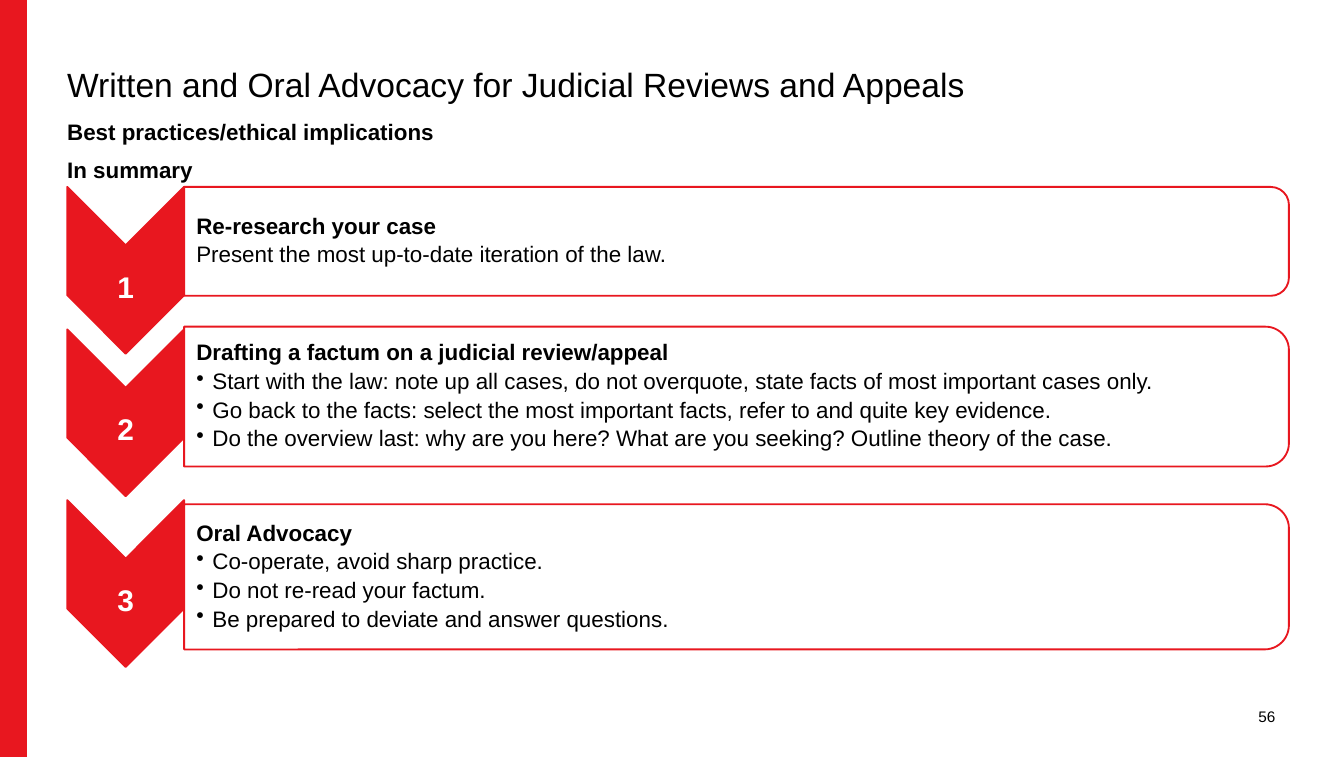
from pptx import Presentation
from pptx.dml.color import RGBColor
from pptx.enum.shapes import MSO_SHAPE
from pptx.enum.text import MSO_ANCHOR, MSO_AUTO_SIZE, PP_ALIGN
from pptx.oxml.ns import qn
from pptx.util import Pt
from lxml import etree

PX = 9144  # 100 px to the inch
WIDE, HIGH = 1000, 563
FONT = "Arial"
INK = {"red": "E8171F", "white": "FFFFFF", "black": "000000"}
RECT, CHEVRON = MSO_SHAPE.RECTANGLE, MSO_SHAPE.CHEVRON
PANEL = MSO_SHAPE.ROUND_2_SAME_RECTANGLE
TOP, MIDDLE = MSO_ANCHOR.TOP, MSO_ANCHOR.MIDDLE
LEFT, CENTER, RIGHT = PP_ALIGN.LEFT, PP_ALIGN.CENTER, PP_ALIGN.RIGHT
NO_FIT = MSO_AUTO_SIZE.NONE

LEFT_EDGE = 50
TAG_WIDE, TAG_HIGH = 87, 124
PANEL_WIDE = 822
HANG = 12

# chevron top, panel top, panel height, heading, lines, bulleted
STEPS = [
    (139, 139, 81, "Re-research your case",
     ["Present the most up-to-date iteration of the law."], False),
    (245, 243, 104, "Drafting a factum on a judicial review/appeal",
     ["Start with the law: note up all cases, do not overquote, "
      "state facts of most important cases only.",
      "Go back to the facts: select the most important facts, "
      "refer to and quite key evidence.",
      "Do the overview last: why are you here? What are you seeking? "
      "Outline theory of the case."], True),
    (372, 375, 108, "Oral Advocacy",
     ["Co-operate, avoid sharp practice.",
      "Do not re-read your factum.",
      "Be prepared to deviate and answer questions."], True),
]


def color(name):
    return RGBColor.from_string(INK[name])


def emu(*nums):
    return [round(num * PX) for num in nums]


def add_bullet(para):
    props = para._p.get_or_add_pPr()
    props.set("marL", str(HANG * PX))
    props.set("indent", str(-HANG * PX))
    etree.SubElement(props, qn("a:buChar")).set("char", "•")


def add_text(slide, box, lines, size=12, bold=False, ink="black", align=LEFT,
             anchor=TOP, inset=0, space=1.0, after=0, head=False,
             bullets=False, shape=None):
    """Fill a text box, or the given shape; head makes only line one bold."""
    if shape is None:
        shape = slide.shapes.add_textbox(*emu(*box))
    else:
        shape.left, shape.top, shape.width, shape.height = emu(*box)
    frame = shape.text_frame
    frame.word_wrap = True
    frame.auto_size = NO_FIT
    frame.vertical_anchor = anchor
    frame.margin_left = inset * PX
    frame.margin_right = frame.margin_top = frame.margin_bottom = 0
    for i, line in enumerate(lines):
        para = frame.add_paragraph() if i else frame.paragraphs[0]
        if bullets and i:
            add_bullet(para)
        para.alignment = align
        para.line_spacing = space
        para.space_after = Pt(after)
        run = para.add_run()
        run.text = line
        font = run.font
        font.name, font.size = FONT, Pt(size)
        font.bold = bold or (head and i == 0)
        font.color.rgb = color(ink)


def add_form(slide, kind, box, fill, line=None, turned=False):
    """Draw a shape that covers box, turned a quarter clockwise if asked."""
    x, y, w, h = box
    if turned:
        x, y, w, h = x + (w - h) / 2, y + (h - w) / 2, h, w
    form = slide.shapes.add_shape(kind, *emu(x, y, w, h))
    form.shadow.inherit = False
    form.fill.solid()
    form.fill.fore_color.rgb = color(fill)
    if line:
        form.line.color.rgb = color(line)
        form.line.width = Pt(1)
    else:
        form.line.fill.background()
    if turned:
        form.rotation = 90


def add_header(slide, x, y, w):
    add_text(slide, (x, y, w, 37),
             ["Written and Oral Advocacy for Judicial Reviews and Appeals"],
             size=18, space=0.9, shape=slide.shapes.title)
    add_text(slide, (x, y + 37, w, 23), ["Best practices/ethical implications"],
             bold=True)
    add_text(slide, (x, y + 65, w, 25), ["In summary"], bold=True)


def add_step(slide, num, tag_top, top, high, heading, lines, bullets):
    add_form(slide, CHEVRON, (LEFT_EDGE, tag_top, TAG_WIDE, TAG_HIGH),
             "red", "red", turned=True)
    add_text(slide, (LEFT_EDGE, tag_top + 57, TAG_WIDE, 37), [str(num)],
             size=16, bold=True, ink="white", align=CENTER, anchor=MIDDLE,
             space=0.9)
    box = (LEFT_EDGE + TAG_WIDE, top, PANEL_WIDE, high)
    add_form(slide, PANEL, box, "white", "red", turned=True)
    add_text(slide, box, [heading] + lines, head=True, bullets=bullets,
             anchor=MIDDLE, inset=9, space=0.9, after=2.4)


def main():
    deck = Presentation()
    deck.slide_width, deck.slide_height = emu(WIDE, HIGH)
    slide = deck.slides.add_slide(deck.slide_layouts[5])
    add_form(slide, RECT, (0, 0, 20, HIGH), "red")
    add_header(slide, LEFT_EDGE, 51, 900)
    for num, step in enumerate(STEPS, 1):
        add_step(slide, num, *step)
    add_text(slide, (893, 503, 56, 60), ["56"], size=8.2, align=RIGHT,
             anchor=MIDDLE)
    deck.save("out.pptx")


if __name__ == "__main__":
    main()
